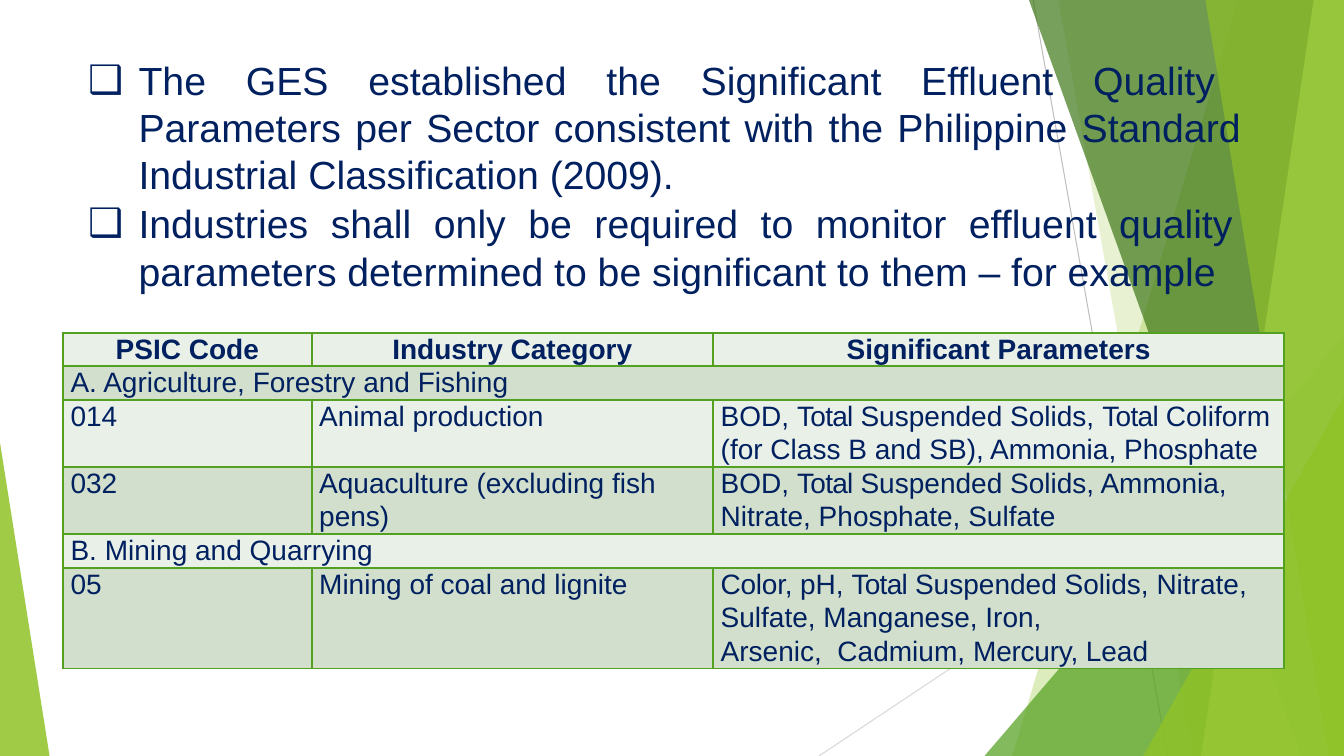
import dataclasses

import pptx
import pptx.dml.color
import pptx.enum.shapes
import pptx.enum.text
import pptx.oxml
import pptx.oxml.ns
import pptx.util


@dataclasses.dataclass(frozen=True)
class Theme:
    """Colours, type and tracking of the slide."""
    font: str = "Arial"
    navy: str = "002060"
    lime: str = "90C226"
    pale_lime: str = "C0E474"
    green: str = "54A021"
    forest: str = "3F7819"
    line_grey: str = "BFBFBF"
    pale_grey: str = "D9D9D9"
    bands: tuple = ("E9F0E8", "D1DFCC")
    list_size: int = 28
    table_size: int = 20
    tracking: tuple = (("Total ", -50), ("Color, ", -20), ("Mercury, ", -20))


def rgb(code):
    """Turn a hex code into a colour."""
    return pptx.dml.color.RGBColor.from_string(code)


def element(markup):
    """Build one drawing element from its tag and content."""
    tag, _, rest = markup.partition(" ")
    return pptx.oxml.parse_xml(f"<a:{tag} {pptx.oxml.ns.nsdecls('a')} {rest}")


class SlideBuilder:
    """Draws themed elements on a grid of 160 columns and 90 rows."""

    UNIT = pptx.util.Inches(1) / 12

    def __init__(self, deck, theme):
        """Size the deck and open its slide."""
        self.theme = theme
        deck.slide_width, deck.slide_height = self.grid(160), self.grid(90)
        self.slide = deck.slides.add_slide(deck.slide_layouts[1])
        title = self.slide.shapes.title._element
        title.getparent().remove(title)

    def grid(self, count):
        """Convert grid steps to a length."""
        return pptx.util.Emu(round(count * self.UNIT))

    def facet(self, corners, color, opacity):
        """Draw a translucent polygon."""
        points = [(self.grid(x), self.grid(y)) for x, y in corners]
        outline = self.slide.shapes.build_freeform(*points[0])
        outline.add_line_segments(points[1:], close=True)
        polygon = outline.convert_to_shape()
        polygon.shadow.inherit = False
        polygon.line.fill.background()
        polygon.fill.solid()
        polygon.fill.fore_color.rgb = rgb(color)
        tint = polygon._element.spPr.find(".//" + pptx.oxml.ns.qn("a:srgbClr"))
        tint.append(element(f'alpha val="{opacity * 1000}"/>'))

    def hairline(self, start, end, color):
        """Draw a thin straight line."""
        ends = [self.grid(value) for value in (*start, *end)]
        line = self.slide.shapes.add_connector(
            pptx.enum.shapes.MSO_CONNECTOR.STRAIGHT, *ends)
        line.line.color.rgb = rgb(color)
        line.line.width = pptx.util.Pt(0.75)
        line._element.spPr.append(element("effectLst />"))

    def add_runs(self, paragraph, runs, size, bold=False):
        """Add styled runs to a paragraph."""
        for words in runs.split("|"):
            run = paragraph.add_run()
            run.text = words
            run.font.name, run.font.size = self.theme.font, pptx.util.Pt(size)
            run.font.bold = bold
            run.font.color.rgb = rgb(self.theme.navy)
            spacing = dict(self.theme.tracking).get(words)
            if spacing:
                run._r.get_or_add_rPr().set("spc", str(spacing))

    def bullets(self, items, left, top, width, height):
        """Fill the body placeholder with a justified checkbox list."""
        body = self.slide.placeholders[1]
        body.left, body.top, body.width, body.height = map(
            self.grid, (left, top, width, height))
        self.slide.shapes._spTree.append(body._element)
        frame = body.text_frame
        frame.word_wrap = True
        frame.auto_size = pptx.enum.text.MSO_AUTO_SIZE.NONE
        frame.vertical_anchor = pptx.enum.text.MSO_ANCHOR.TOP
        frame.margin_left = frame.margin_right = frame.margin_bottom = 0
        frame.margin_top = self.grid(0.2)
        for index, (runs, leading) in enumerate(items):
            paragraph = frame.add_paragraph() if index else frame.paragraphs[0]
            paragraph.alignment = pptx.enum.text.PP_ALIGN.JUSTIFY
            paragraph.line_spacing = leading
            paragraph.space_before = pptx.util.Pt(1)
            properties = paragraph._p.get_or_add_pPr()
            properties.set("marL", str(self.grid(6.1)))
            properties.set("indent", str(self.grid(-6)))
            properties.append(element('buChar char="❑"/>'))
            self.add_runs(paragraph, runs, self.theme.list_size)

    def cell(self, cell, lines, fill, heading):
        """Style one table cell and set its lines."""
        cell.margin_left = self.grid(0 if heading else 0.9)
        cell.margin_right = cell.margin_top = cell.margin_bottom = 0
        properties = cell._tc.get_or_add_tcPr()
        for side in "LRTB":
            properties.append(element(
                f'ln{side} w="{pptx.util.Pt(1.5)}"><a:solidFill><a:srgbClr '
                f'val="{self.theme.green}"/></a:solidFill></a:ln{side}>'))
        cell.fill.solid()
        cell.fill.fore_color.rgb = rgb(fill)
        frame = cell.text_frame
        for index, line in enumerate(lines):
            paragraph = frame.add_paragraph() if index else frame.paragraphs[0]
            paragraph.line_spacing = pptx.util.Pt(23.9 if index else 23.1)
            if heading:
                paragraph.alignment = pptx.enum.text.PP_ALIGN.CENTER
            for part, words in enumerate(line.split("\n")):
                if part:
                    paragraph.add_line_break()
                self.add_runs(paragraph, words, self.theme.table_size, heading)

    def table(self, rows, left, top, widths, heights):
        """Draw a banded table, merging rows that hold a single entry."""
        table = self.slide.shapes.add_table(
            len(rows), len(widths), self.grid(left), self.grid(top),
            self.grid(sum(widths)), self.grid(sum(heights))).table
        table.first_row = table.horz_banding = False
        for column, width in zip(table.columns, widths):
            column.width = self.grid(width)
        for number, (entries, height) in enumerate(zip(rows, heights)):
            table.rows[number].height = self.grid(height)
            fill = self.theme.bands[number % 2]
            for column in range(len(widths)):
                lines = entries[column] if column < len(entries) else ()
                self.cell(table.cell(number, column), lines, fill, number == 0)
            if len(entries) == 1:
                table.cell(number, 0).merge(table.cell(number, len(widths) - 1))


def main():
    """Build and save the slide on significant effluent parameters."""
    theme = Theme()
    deck = pptx.Presentation()
    builder = SlideBuilder(deck, theme)

    builder.hairline((123, 0), (139, 90), theme.line_grey)
    builder.hairline((160, 48.4), (97.5, 90), theme.pale_grey)
    top_right, bottom_right = (160, 0), (160, 90)
    for upper, lower, color, opacity in (
            (147.4, 120.5, theme.lime, 30), (126, 142, theme.lime, 20),
            (None, (117.2, 40), theme.green, 72), (122.5, 154.9, theme.forest, 70),
            (156.4, 143, theme.pale_lime, 70), (143.5, 158.2, theme.lime, 65),
            (None, (136.1, 47.2), theme.lime, 80)):
        if upper is None:
            foot, peak = lower
            corners = [(160, peak), (foot, 90), bottom_right]
        else:
            corners = [top_right, (upper, 0), (lower, 90), bottom_right]
        builder.facet(corners, color, opacity)
    builder.facet([(0, 52.7), (0, 90), (5.9, 90)], theme.lime, 85)

    builder.bullets((
        ("The GES established the Significant Effluent Quality  Parameters per "
         "Sector consistent with the Philippine Standard  Industrial "
         "Classification (2009).", 1.0),
        ("Industries shall only be required to monitor effluent quality  "
         "parameters determined to be significant to them – for example",
         pptx.util.Pt(34.1)),
    ), 10.4, 6.5, 139, 28.4)

    builder.table((
        (["PSIC Code"], ["Industry Category"], ["Significant Parameters"]),
        (["A. Agriculture, Forestry and Fishing"],),
        (["014"], ["Animal production"],
         ["BOD, |Total |Suspended Solids, |Total |Coliform",
          "(for Class B and SB), Ammonia, Phosphate"]),
        (["032"], ["Aquaculture (excluding fish", "pens)"],
         ["BOD, |Total |Suspended Solids, Ammonia,",
          "Nitrate, Phosphate, Sulfate"]),
        (["B. Mining and Quarrying"],),
        (["05"], ["Mining of coal and lignite"],
         ["Color, |pH, |Total |Suspended Solids, Nitrate,",
          "Sulfate, Manganese, Iron,\nArsenic,  Cadmium, |Mercury, |Lead"]),
    ), 7.5, 39.6, (29.6, 47.8, 68), (4, 4, 8, 8, 4, 12))

    deck.save("out.pptx")


if __name__ == "__main__":
    main()
